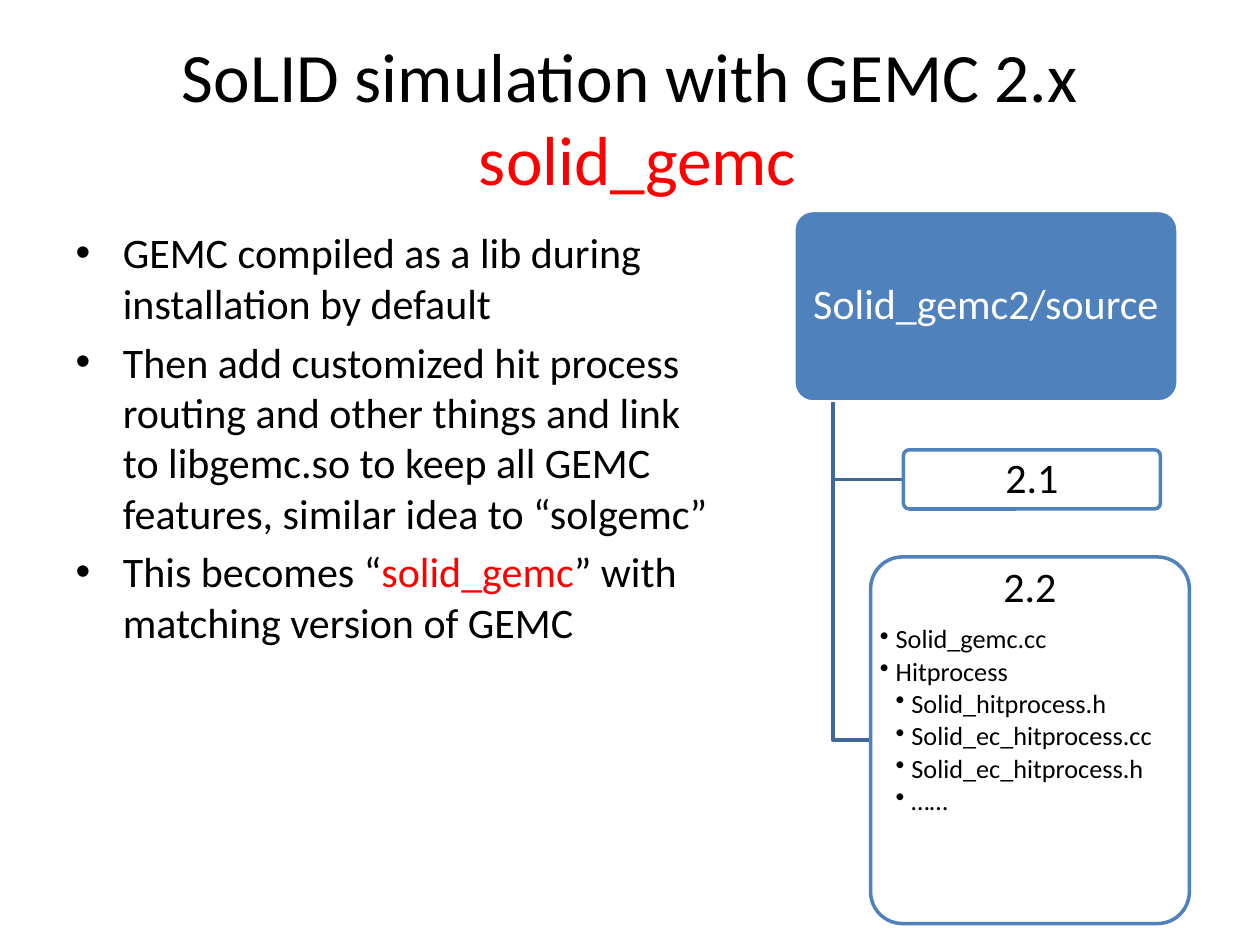
"""Build a slide on solid_gemc with its source tree diagram."""
from typing import NamedTuple

from lxml import etree
from pptx import Presentation
from pptx.dml.color import RGBColor
from pptx.enum.shapes import MSO_SHAPE
from pptx.enum.text import MSO_ANCHOR, MSO_AUTO_SIZE, PP_ALIGN
from pptx.oxml.ns import qn
from pptx.util import Inches, Pt

ROUNDED = MSO_SHAPE.ROUNDED_RECTANGLE
TOP, MIDDLE = MSO_ANCHOR.TOP, MSO_ANCHOR.MIDDLE
CENTER, LEFT = PP_ALIGN.CENTER, PP_ALIGN.LEFT
NO_AUTOFIT = MSO_AUTO_SIZE.NONE
FONT = "Calibri"
COLORS = {"text": "000000", "accent": "FF0000", "box": "4F81BD",
          "branch": "3F6797", "white": "FFFFFF"}
TRUNK_X = 6.61
BULLET_INDENT = 0.125


class Item(NamedTuple):
    text: str
    level: int


class Box(NamedTuple):
    left: float
    top: float
    width: float
    height: float
    heading: str
    fill: str = "white"
    line: str = "box"
    color: str = "text"
    anchor: MSO_ANCHOR = MIDDLE
    items: tuple[Item, ...] = ()


ROOT = Box(6.3, 1.67, 3.05, 1.52, "Solid_gemc2/source", "box", "white", "white")
VERSIONS = [
    Box(7.17, 3.57, 2.04, 0.47, "2.1"),
    Box(6.91, 4.42, 2.53, 2.91, "2.2", anchor=TOP, items=(
        Item("Solid_gemc.cc", 1), Item("Hitprocess", 1),
        Item("Solid_hitprocess.h", 2), Item("Solid_ec_hitprocess.cc", 2),
        Item("Solid_ec_hitprocess.h", 2), Item("……", 2))),
]
BULLETS = [
    ["GEMC compiled as a lib during installation by default"],
    ["Then add customized hit process routing and other things and link to "
     "libgemc.so to keep all GEMC features, similar idea to “solgemc”"],
    ["This becomes “", "solid_gemc", "” with matching version of GEMC"],
]


def rgb(name: str) -> RGBColor:
    """Return the named colour."""
    return RGBColor.from_string(COLORS[name])


def format_run(run, size: float, color: str) -> None:
    """Set font, size and colour of a run."""
    run.font.name = FONT
    run.font.size = Pt(size)
    run.font.color.rgb = rgb(color)


def place(shape, left: float, top: float, width: float, height: float) -> None:
    """Move and size a placeholder."""
    shape.left, shape.top = Inches(left), Inches(top)
    shape.width, shape.height = Inches(width), Inches(height)
    shape.text_frame.auto_size = NO_AUTOFIT


def fill_title(title) -> None:
    """Write the two-line title."""
    place(title, 0.5, 0.3, 9, 1.25)
    paragraph = title.text_frame.paragraphs[0]
    paragraph.text = "SoLID simulation with GEMC 2.x\v solid_gemc"
    for run, color in zip(paragraph.runs, ("text", "accent")):
        format_run(run, 39.6, color)


def fill_body(body) -> None:
    """Write the bullet list."""
    place(body, 0.5, 1.75, 5.33, 4.95)
    frame = body.text_frame
    frame.text = "\n".join(parts[0] for parts in BULLETS)
    for paragraph, parts in zip(frame.paragraphs, BULLETS):
        for part in parts[1:]:
            paragraph.add_run().text = part
        for run in paragraph.runs:
            format_run(run, 24, "accent" if run.text == "solid_gemc" else "text")


def set_bullet(paragraph, level: int) -> None:
    """Give a paragraph a bullet with a hanging indent."""
    properties = paragraph._p.get_or_add_pPr()
    properties.set("marL", str(Inches(BULLET_INDENT * level)))
    properties.set("indent", str(-Inches(BULLET_INDENT)))
    etree.SubElement(properties, qn("a:buChar")).set("char", "•")


def draw_box(slide, box: Box) -> None:
    """Draw a rounded box with its heading and items."""
    shape = slide.shapes.add_shape(ROUNDED, Inches(box.left), Inches(box.top),
                                   Inches(box.width), Inches(box.height))
    shape.adjustments[0] = 0.1
    shape.shadow.inherit = False
    shape.fill.solid()
    shape.fill.fore_color.rgb = rgb(box.fill)
    shape.line.color.rgb = rgb(box.line)
    shape.line.width = Pt(2)
    frame = shape.text_frame
    frame.word_wrap = True
    frame.vertical_anchor = box.anchor
    frame.margin_left = frame.margin_right = 0
    frame.margin_top = frame.margin_bottom = 0
    items = (Item(box.heading, 0), *box.items)
    frame.text = "\n".join(item.text for item in items)
    for paragraph, item in zip(frame.paragraphs, items):
        paragraph.line_spacing = 0.9
        paragraph.space_after = Pt(2.25 if item.level else 8.4)
        paragraph.alignment = LEFT if item.level else CENTER
        if item.level:
            set_bullet(paragraph, item.level)
        format_run(paragraph.runs[0], 15 if item.level else 24, box.color)


def draw_branch(slide, box: Box) -> None:
    """Draw the elbow from the root box to a version box."""
    middle = Inches(box.top + box.height / 2)
    trunk = Inches(TRUNK_X)
    builder = slide.shapes.build_freeform(trunk, Inches(ROOT.top + ROOT.height))
    builder.add_line_segments([(trunk, middle), (Inches(box.left), middle)],
                              close=False)
    branch = builder.convert_to_shape()
    branch.shadow.inherit = False
    branch.fill.background()
    branch.line.color.rgb = rgb("branch")
    branch.line.width = Pt(2)


def main() -> None:
    """Build and save the presentation."""
    presentation = Presentation()
    presentation.slide_width = Inches(10)
    presentation.slide_height = Inches(7.5)
    slide = presentation.slides.add_slide(presentation.slide_layouts[1])
    fill_title(slide.shapes.title)
    fill_body(slide.placeholders[1])
    draw_box(slide, ROOT)
    for version in VERSIONS:
        draw_branch(slide, version)
        draw_box(slide, version)
    presentation.save("out.pptx")


if __name__ == "__main__":
    main()
